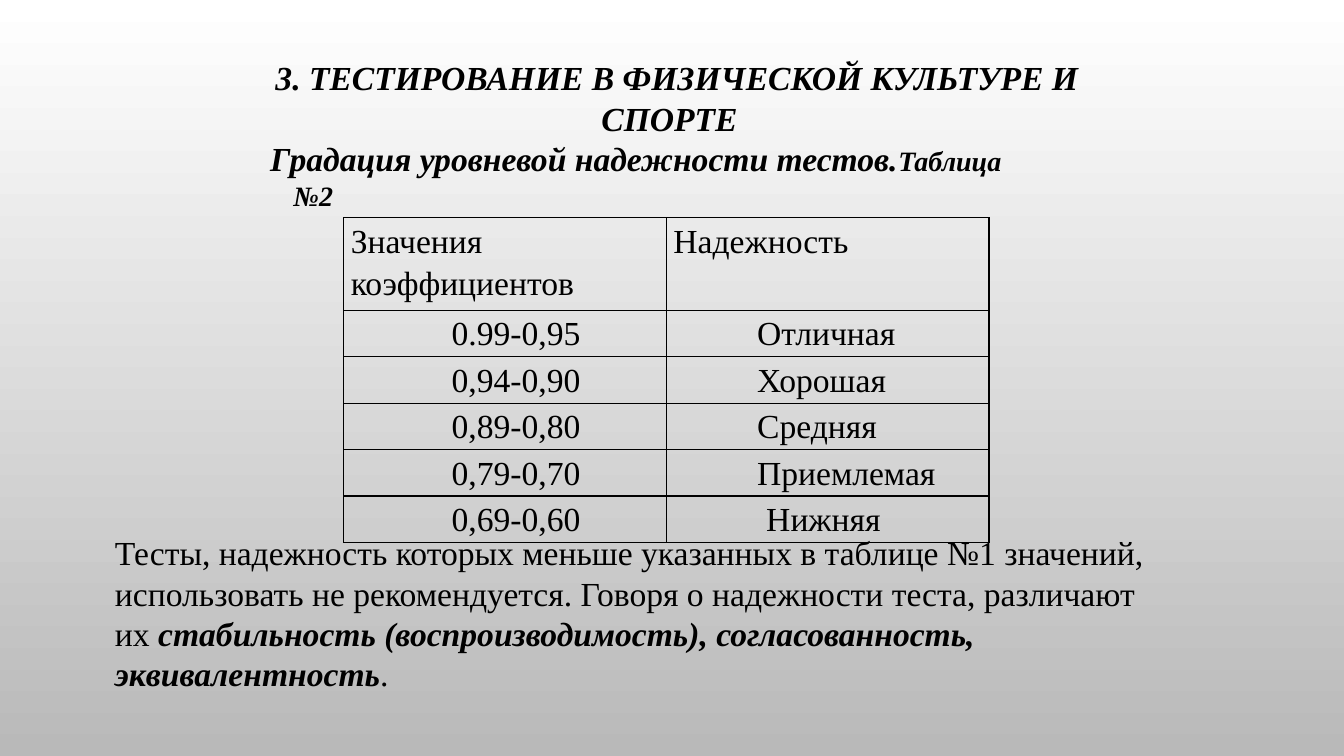
import pptx
import pptx.util
import pptx.dml.color
import pptx.enum.text
import pptx.oxml
import pptx.oxml.ns
from lxml import etree

Inches, Pt = pptx.util.Inches, pptx.util.Pt
Align = pptx.enum.text.PP_ALIGN
Anchor = pptx.enum.text.MSO_ANCHOR
Fit = pptx.enum.text.MSO_AUTO_SIZE
qn = pptx.oxml.ns.qn

theme = {
    "face": "Times New Roman",
    "ink": pptx.dml.color.RGBColor.from_string("000000"),
    "top": pptx.dml.color.RGBColor.from_string("FFFFFF"),
    "base": pptx.dml.color.RGBColor.from_string("B9B9B9"),
    "text": Pt(24),
    "label": Pt(20),
    "rule": Pt(1),
}


def style(font, size, strong=False):
    font.name = theme["face"]
    font.size = size
    font.bold = font.italic = strong
    font.color.rgb = theme["ink"]


def place(shape, left, top, width, height):
    shape.left, shape.top = Inches(left), Inches(top)
    shape.width, shape.height = Inches(width), Inches(height)
    shape.text_frame.word_wrap = True
    shape.text_frame.auto_size = Fit.SHAPE_TO_FIT_TEXT
    return shape.text_frame


deck = pptx.Presentation()
deck.slide_width, deck.slide_height = Inches(13.33), Inches(7.5)
slide = deck.slides.add_slide(deck.slide_layouts[1])

fill = slide.background.fill
fill.gradient()
fill.gradient_angle = 270
for stop, place_at, tone in zip(fill.gradient_stops, (0, 1), ("top", "base")):
    stop.position = place_at
    stop.color.rgb = theme[tone]

rows = [
    ("Значения коэффициентов", "Надежность"),
    ("0.99-0,95", "Отличная"),
    ("0,94-0,90", "Хорошая"),
    ("0,89-0,80", "Средняя"),
    ("0,79-0,70", "Приемлемая"),
    ("0,69-0,60", "Нижняя"),
]
frame = slide.shapes.add_table(
    len(rows), 2, Inches(3.41), Inches(2.16), Inches(6.4), Inches(3.22))
table = frame.table
table.first_row = table.horz_banding = False
for r, words in enumerate(rows):
    table.rows[r].height = Inches(0.46 if r else 0.92)
    for c, word in enumerate(words):
        cell = table.cell(r, c)
        cell.margin_left = cell.margin_right = Inches(0.07)
        cell.margin_top = cell.margin_bottom = 0
        cell.fill.background()
        props = cell._tc.get_or_add_tcPr()
        for n, side in enumerate(("lnL", "lnR", "lnT", "lnB")):
            line = etree.Element(qn("a:" + side), w=str(theme["rule"]))
            solid = etree.SubElement(line, qn("a:solidFill"))
            etree.SubElement(solid, qn("a:srgbClr"), val=str(theme["ink"]))
            props.insert(n, line)
        para = cell.text_frame.paragraphs[0]
        para.text = word
        para.alignment = Align.JUSTIFY
        para.line_spacing = 1.15
        para.space_after = Pt(10)
        if r:
            shift = 0.92 if word == "Нижняя" else (1, 0.83)[c]
            para._p.get_or_add_pPr().set("marL", str(Inches(shift)))
        style(para.font, theme["text"])

title = place(slide.shapes.title, 2.31, 0.51, 8.81, 1.65)
title.vertical_anchor = Anchor.MIDDLE
head = title.paragraphs[0]
head.text = "3. ТЕСТИРОВАНИЕ В ФИЗИЧЕСКОЙ КУЛЬТУРЕ И СПОРТЕ\t"
head.alignment = Align.CENTER
style(head.font, theme["text"], True)

sub = title.add_paragraph()
sub.alignment = Align.LEFT
props = sub._p.get_or_add_pPr()
props.set("indent", str(Inches(0.27)))
tabs = etree.SubElement(props, qn("a:tabLst"))
etree.SubElement(tabs, qn("a:tab"), pos=str(Inches(8.6)), algn="r")
for part, size in (("Градация уровневой надежности тестов.", "text"),
                   ("\tТаблица", "label"), ("\t№2", "label")):
    if "№" in part:
        sub.add_line_break()
    run = sub.add_run()
    run.text = part
    style(run.font, theme[size], True)

body = place(slide.placeholders[1], 1.04, 5.23, 10.47, 1.72)
note = body.paragraphs[0]
note.space_before = 0
props = note._p.get_or_add_pPr()
props.set("marL", "0")
props.set("indent", "0")
etree.SubElement(props, qn("a:buNone"))
for part, strong in (
        ("Тесты, надежность которых меньше указанных в таблице №1 значений, "
         "использовать не рекомендуется. Говоря о надежности теста, "
         "различают их ", False),
        ("стабильность (воспроизводимость), согласованность, "
         "эквивалентность", True),
        (".", False)):
    run = note.add_run()
    run.text = part
    style(run.font, theme["text"], strong)

deck.save("out.pptx")
